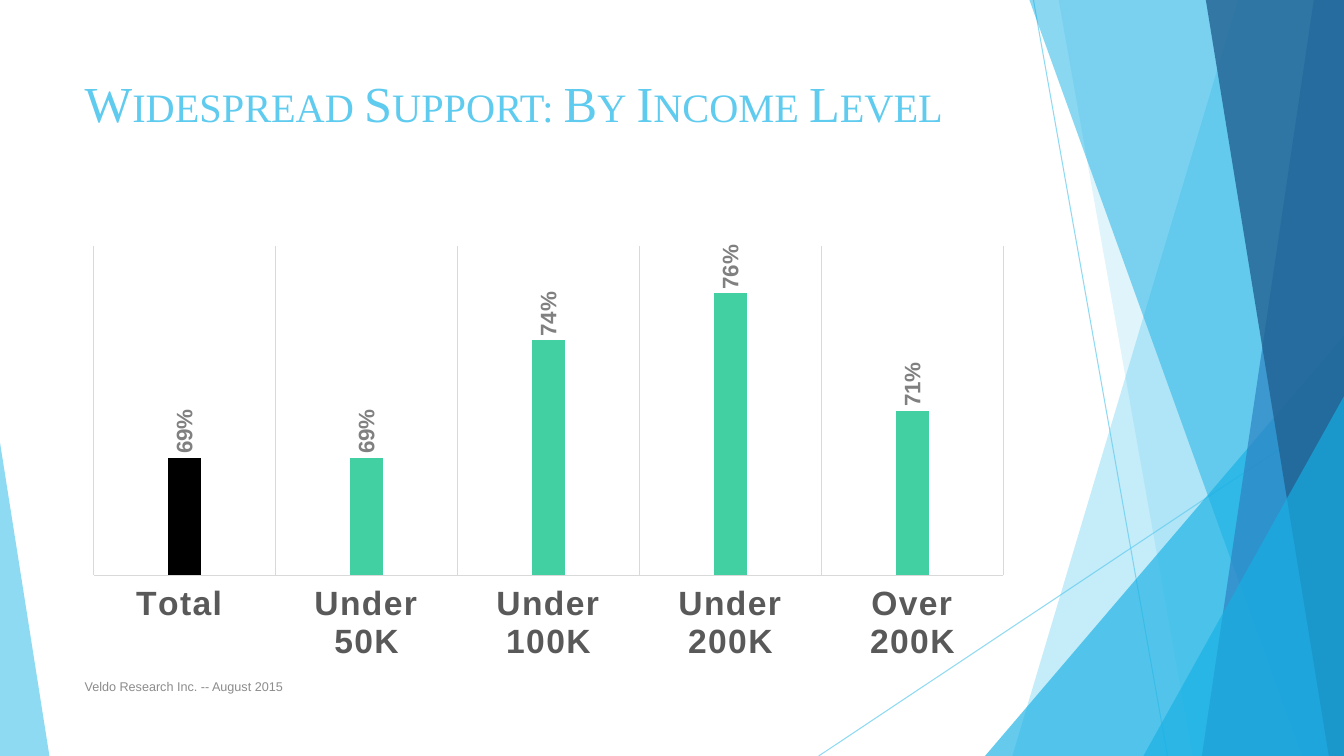
from lxml import etree
from pptx import Presentation
from pptx.chart.data import CategoryChartData
from pptx.dml.color import RGBColor
from pptx.enum.chart import XL_CHART_TYPE, XL_LABEL_POSITION, XL_TICK_LABEL_POSITION, XL_TICK_MARK
from pptx.enum.shapes import MSO_CONNECTOR, MSO_SHAPE
from pptx.enum.text import MSO_ANCHOR, PP_ALIGN
from pptx.oxml.ns import qn
from pptx.util import Inches, Pt

COLUMNS = XL_CHART_TYPE.COLUMN_CLUSTERED
OUTSIDE = XL_LABEL_POSITION.OUTSIDE_END
LABELS_LOW = XL_TICK_LABEL_POSITION.LOW
NO_TICK = XL_TICK_MARK.NONE
STRAIGHT = MSO_CONNECTOR.STRAIGHT
TRIANGLE = MSO_SHAPE.ISOSCELES_TRIANGLE
TOP, MIDDLE = MSO_ANCHOR.TOP, MSO_ANCHOR.MIDDLE
LEFT = PP_ALIGN.LEFT
W, H = 13.33, 7.5
SKY, AZURE, BLUE, NAVY = "5FCBEF", "17B0E4", "2E83C3", "226292"


def rgb(color):
    return RGBColor.from_string(color)


def set_alpha(shape, percent):
    for clr in shape._element.spPr.iter(qn("a:srgbClr")):
        etree.SubElement(clr, qn("a:alpha"), val=str(percent * 1000))


prs = Presentation()
prs.slide_width, prs.slide_height = Inches(W), Inches(H)
s = prs.slides.add_slide(prs.slide_layouts[5])

# Thin lines behind the facets
for x1, y1, x2, y2 in [(10.25, 0, 11.58, H), (W, 4.03, 8.12, H)]:
    line = s.shapes.add_connector(STRAIGHT, Inches(x1), Inches(y1), Inches(x2), Inches(y2))
    line.line.color.rgb = rgb(SKY)
    line.line.width = Pt(0.75)
    set_alpha(line, 70)
    etree.SubElement(line._element.spPr, qn("a:effectLst"))

# Facets: bands run from (top x, bottom x) to the right edge,
# triangles stand on the bottom edge with (left, width, height, apex)
facets = [
    ("band", (12.28, 10.04), SKY, 36),
    ("band", (10.5, 11.83), SKY, 20),
    ("triangle", (9.77, 3.56, 4.17, 1), AZURE, 66),
    ("band", (10.21, 12.91), AZURE, 50),
    ("band", (13.03, 11.92), BLUE, 70),
    ("band", (11.96, 13.18), NAVY, 80),
    ("triangle", (11.34, 1.99, 3.57, 1), AZURE, 66),
    ("triangle", (0, 0.49, 3.11, 0), SKY, 70),
]
for kind, dims, color, alpha in facets:
    if kind == "band":
        top_x, bottom_x = dims
        fb = s.shapes.build_freeform(Inches(top_x), 0)
        fb.add_line_segments([(Inches(x), Inches(y)) for x, y in
                              [(W, 0), (W, H), (bottom_x, H)]], close=True)
        sp = fb.convert_to_shape()
    else:
        left, width, height, apex = dims
        sp = s.shapes.add_shape(TRIANGLE, Inches(left), Inches(H - height),
                                Inches(width), Inches(height))
        sp.adjustments[0] = apex
    sp.shadow.inherit = False
    sp.fill.solid()
    sp.fill.fore_color.rgb = rgb(color)
    sp.line.fill.background()
    set_alpha(sp, alpha)

# Title and source note
title = s.shapes.title
title.left, title.top, title.width, title.height = map(Inches, (0.74, 0.67, 9.4, 1.44))
note = s.shapes.add_textbox(Inches(0.74), Inches(6.61), Inches(6.89), Inches(0.4))
for sp, text, font, size, color, anchor in [
    (title, "Widespread Support: By Income Level", "Times New Roman", 36, SKY, TOP),
    (note, "Veldo Research Inc. -- August 2015", "Arial", 9, "8C8C8C", MIDDLE),
]:
    tf = sp.text_frame
    tf.word_wrap = True
    tf.vertical_anchor = anchor
    p = tf.paragraphs[0]
    p.alignment = LEFT
    r = p.add_run()
    r.text = text
    r.font.name, r.font.size = font, Pt(size)
    r.font.color.rgb = rgb(color)
title.text_frame.paragraphs[0].runs[0].font._element.set("cap", "small")

# Column chart
data = CategoryChartData(number_format="0%")
data.categories = ["Total ", "Under 50K", "Under 100K", "Under 200K", "Over 200K"]
data.add_series("Series 1", [0.69, 0.69, 0.74, 0.76, 0.71])
chart = s.shapes.add_chart(COLUMNS, Inches(0.74), Inches(2.36),
                           Inches(9.4), Inches(4.24), data).chart
chart.has_legend = chart.has_title = False
chart.font.name, chart.font.size = "Arial", Pt(10)

plot = chart.plots[0]
plot.vary_by_categories = False
plot.gap_width, plot.overlap = 444, -90
series = plot.series[0]
for bar, color in [(series, "42D0A2"), (series.points[0], "000000")]:
    bar.format.fill.solid()
    bar.format.fill.fore_color.rgb = rgb(color)

# Axes
cat, val = chart.category_axis, chart.value_axis
cat.major_tick_mark = NO_TICK
cat.tick_label_position = LABELS_LOW
cat.has_major_gridlines = True
for line in (cat.format.line, cat.major_gridlines.format.line):
    line.color.rgb = rgb("D9D9D9")
    line.width = Pt(0.75)
val.minimum_scale, val.maximum_scale = 0.64, 0.78
val.has_major_gridlines = False
val.visible = False

# Axis labels and upright data labels
labels = series.data_labels
labels.show_value = True
labels.number_format, labels.number_format_is_linked = "0%", False
labels.position = OUTSIDE
for font, size, color in [(cat.tick_labels.font, 24, "595959"), (labels.font, 16, "808080")]:
    font.name, font.size, font.bold = "Arial", Pt(size), True
    font.color.rgb = rgb(color)
cat.tick_labels.font._element.set("spc", "100")
body = labels._element.find(qn("c:txPr")).find(qn("a:bodyPr"))
body.set("rot", "-5400000")
body.set("vert", "horz")

# Fixed plot area, as fractions of the chart
area = chart._chartSpace.chart.plotArea
for old in area.findall(qn("c:layout")):
    area.remove(old)
layout = etree.Element(qn("c:layout"))
area.insert(0, layout)
manual = etree.SubElement(layout, qn("c:manualLayout"))
for tag, value in [("layoutTarget", "inner"), ("xMode", "edge"), ("yMode", "edge"),
                   ("x", 0.02), ("y", 0.02), ("w", 0.96), ("h", 0.77)]:
    etree.SubElement(manual, qn("c:" + tag), val=str(value))

prs.save("out.pptx")
